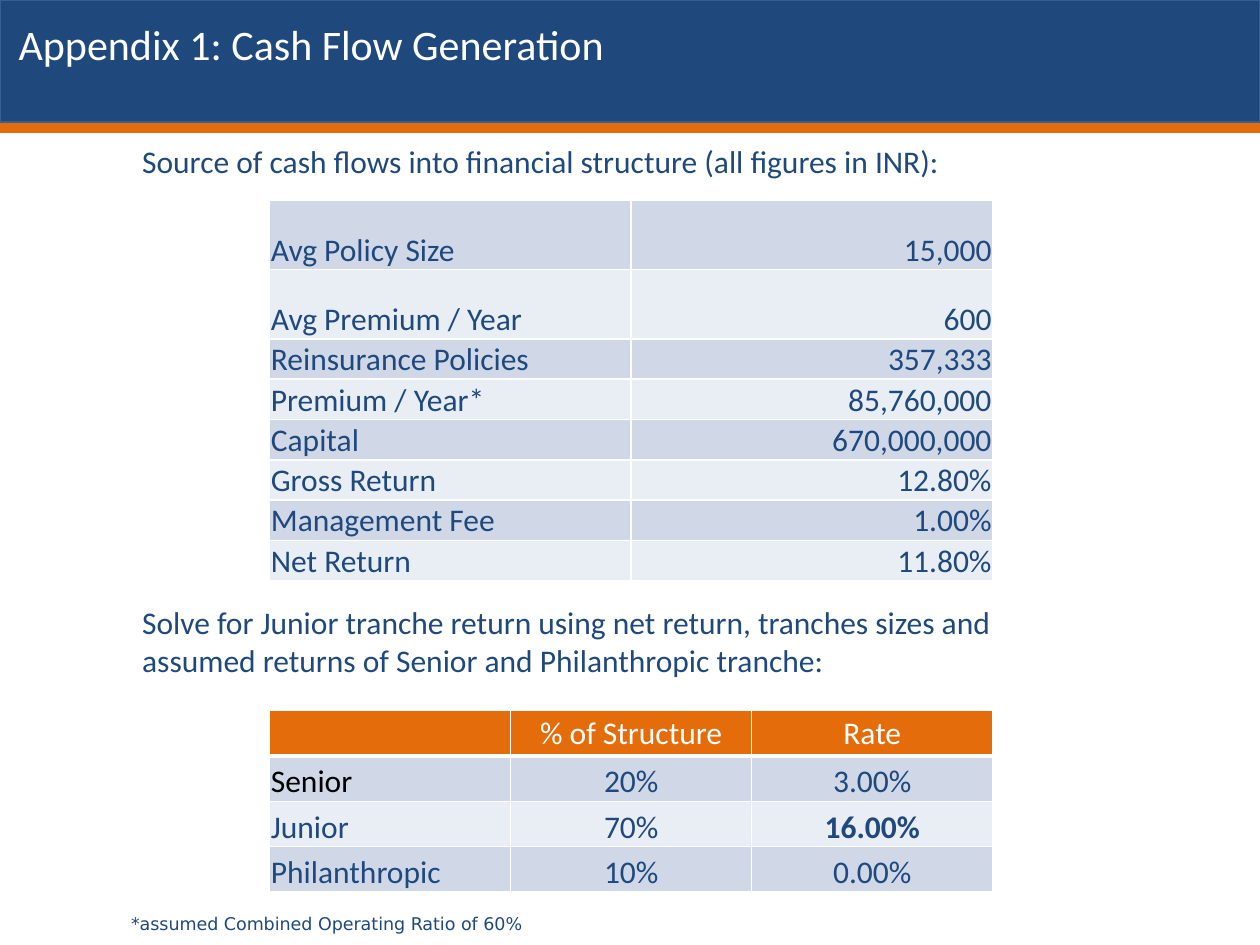
from lxml import etree
from pptx import Presentation
from pptx.dml.color import RGBColor
from pptx.enum.shapes import MSO_SHAPE
from pptx.enum.text import MSO_ANCHOR, MSO_AUTO_SIZE, PP_ALIGN
from pptx.oxml import parse_xml
from pptx.oxml.ns import nsdecls, qn
from pptx.util import Inches, Pt

RECTANGLE = MSO_SHAPE.RECTANGLE
TOP, MIDDLE, BOTTOM = MSO_ANCHOR.TOP, MSO_ANCHOR.MIDDLE, MSO_ANCHOR.BOTTOM
LEFT, CENTER, RIGHT = PP_ALIGN.LEFT, PP_ALIGN.CENTER, PP_ALIGN.RIGHT
FIT_SHAPE = MSO_AUTO_SIZE.SHAPE_TO_FIT_TEXT

NAVY, ORANGE, WHITE, BLACK = "1F497D", "E46C0A", "FFFFFF", "000000"
BANDS = ("D0D8E8", "E9EDF4")

CASH_FLOWS = [
    ("Avg Policy Size", "15,000"),
    ("Avg Premium / Year", "600"),
    ("Reinsurance Policies", "357,333"),
    ("Premium / Year*", "85,760,000"),
    ("Capital", "670,000,000"),
    ("Gross Return", "12.80%"),
    ("Management Fee", "1.00%"),
    ("Net Return", "11.80%"),
]
TRANCHES = [
    ("", "% of Structure", "Rate"),
    ("Senior", "20%", "3.00%"),
    ("Junior", "70%", "16.00%"),
    ("Philanthropic", "10%", "0.00%"),
]


def color(value):
    return RGBColor.from_string(value)


def add_run(para, text, fill, size=18, font="Calibri", bold=False):
    span = para.add_run()
    span.text = text
    span.font.size = Pt(size)
    span.font.name = font
    span.font.bold = bold
    span.font.color.rgb = color(fill)


def add_bar(page, top, height, fill, line, line_width):
    bar = page.shapes.add_shape(RECTANGLE, 0, Inches(top), Inches(10), Inches(height))
    bar.fill.solid()
    bar.fill.fore_color.rgb = color(fill)
    bar.line.color.rgb = color(line)
    bar.line.width = Pt(line_width)
    bar.shadow.inherit = False
    return bar


def add_shadow(shape):
    effects = shape._element.spPr.find(qn("a:effectLst"))
    effects.append(parse_xml(
        f'<a:outerShdw {nsdecls("a")} blurRad="{Pt(3.1)}" dist="{Pt(1.8)}" dir="5400000">'
        f'<a:srgbClr val="{BLACK}"><a:alpha val="35000"/></a:srgbClr></a:outerShdw>'))


def add_text(page, place, text, fill=NAVY, size=18, anchor=TOP, wrap=True, fit=True):
    box = page.shapes.add_textbox(*map(Inches, place))
    frame = box.text_frame
    frame.word_wrap = wrap
    frame.vertical_anchor = anchor
    if fit:
        frame.auto_size = FIT_SHAPE
    add_run(frame.paragraphs[0], text, fill, size)


def add_grid(page, left, top, width, columns, heights):
    """Add an unstyled table with equal columns and tight cell margins."""
    frame = page.shapes.add_table(len(heights), columns, Inches(left), Inches(top),
                                  Inches(width), Inches(sum(heights)))
    grid = frame.table
    grid.first_row = grid.horz_banding = False
    for row, height in zip(grid.rows, heights):
        row.height = Inches(height)
    for cell in grid.iter_cells():
        cell.margin_left = cell.margin_top = cell.margin_right = Inches(0.01)
        cell.margin_bottom = 0
        cell.vertical_anchor = BOTTOM
        cell.fill.background()
    return grid


def set_borders(cell, bottom=1):
    properties = cell._tc.get_or_add_tcPr()
    widths = {"lnL": 1, "lnR": 1, "lnT": 1, "lnB": bottom}
    for position, (side, width) in enumerate(widths.items()):
        border = etree.Element(qn(f"a:{side}"), w=str(Pt(width)))
        fill = etree.SubElement(border, qn("a:solidFill"))
        etree.SubElement(fill, qn("a:srgbClr"), val=WHITE)
        properties.insert(position, border)


def fill_cell(cell, text, fill, text_fill, align, bold=False, bottom=1):
    cell.fill.solid()
    cell.fill.fore_color.rgb = color(fill)
    set_borders(cell, bottom)
    para = cell.text_frame.paragraphs[0]
    para.alignment = align
    if text:
        add_run(para, text, text_fill, bold=bold)
    else:
        para.font.size = Pt(18)


def add_cash_flow_table(page):
    grid = add_grid(page, 2.14, 1.59, 5.74, 2, [0.55] * 2 + [0.32] * 6)
    for r, values in enumerate(CASH_FLOWS):
        for c, text in enumerate(values):
            fill_cell(grid.cell(r, c), text, BANDS[r % 2], NAVY, RIGHT if c else LEFT)


def add_tranche_table(page):
    grid = add_grid(page, 2.14, 5.64, 5.74, 3, [0.36] * 4)
    for r, values in enumerate(TRANCHES):
        for c, text in enumerate(values):
            cell = grid.cell(r, c)
            align = CENTER if c else LEFT
            if r == 0:
                cell.vertical_anchor = MIDDLE
                fill_cell(cell, text, ORANGE, WHITE, align, bottom=3)
            else:
                text_fill = BLACK if text == "Senior" else NAVY
                fill_cell(cell, text, BANDS[(r - 1) % 2], text_fill, align,
                          bold=text == "16.00%")


def add_footnote(page):
    grid = add_grid(page, 1.03, 7.24, 3.2, 1, [0.18])
    add_run(grid.cell(0, 0).text_frame.paragraphs[0],
            "*assumed Combined Operating Ratio of 60%", NAVY, 10, "DejaVu Sans")


def main():
    deck = Presentation()
    deck.slide_width, deck.slide_height = Inches(10), Inches(7.5)
    page = deck.slides.add_slide(deck.slide_layouts[6])
    add_shadow(add_bar(page, 0, 0.97, NAVY, "376092", 0.75))
    add_bar(page, 0.99, 0.05, ORANGE, ORANGE, 2)
    add_text(page, (0.05, -0.01, 9.93, 0.72), "Appendix 1: Cash Flow Generation",
             WHITE, 24, MIDDLE, fit=False)
    add_footnote(page)
    add_text(page, (1.03, 1.08, 6.61, 0.4),
             "Source of cash flows into financial structure (all figures in INR):", wrap=False)
    add_text(page, (1.03, 4.74, 7.8, 0.71),
             "Solve for Junior tranche return using net return, tranches sizes and "
             "assumed returns of Senior and Philanthropic tranche:")
    add_tranche_table(page)
    add_cash_flow_table(page)
    deck.save("out.pptx")


if __name__ == "__main__":
    main()
